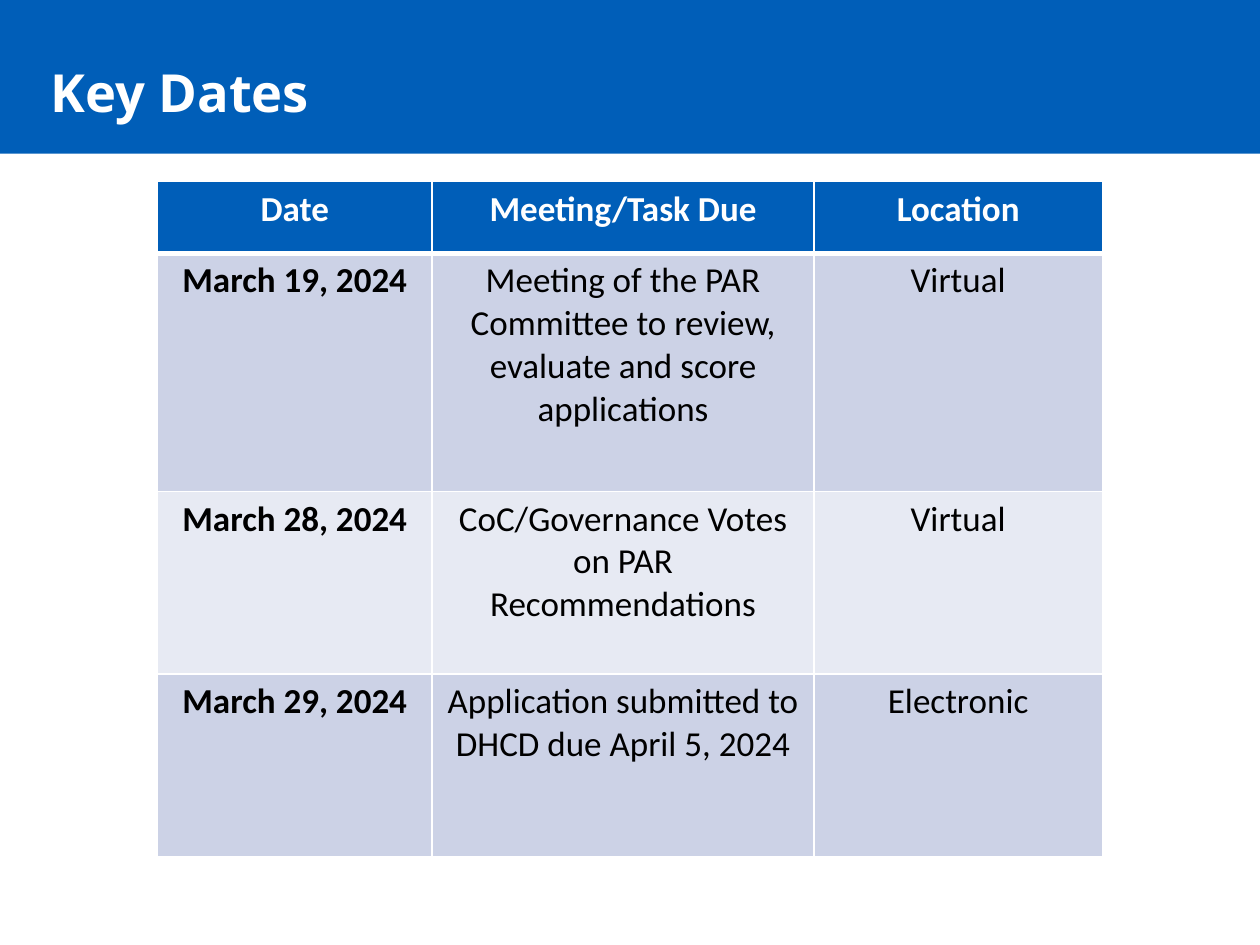
from lxml import etree
from pptx import Presentation
from pptx import util as u
from pptx.dml import color
from pptx.enum import shapes, text
from pptx.oxml import ns

BLUE, WHITE, BLACK = "005EB8", "FFFFFF", "000000"
BANDS = ["CCD2E6", "E7EAF3"]
COLUMN_WIDTHS = [2.18, 3.03, 2.29]
ROW_HEIGHTS = [0.57, 1.89, 1.45, 1.45]
KEY_DATES = [
    ["Date", "Meeting/Task Due", "Location"],
    ["March 19, 2024",
     "Meeting of the PAR Committee to review, evaluate and score applications", "Virtual"],
    ["March 28, 2024", "CoC/Governance Votes on PAR Recommendations", "Virtual"],
    ["March 29, 2024", "Application submitted to DHCD due April 5, 2024", "Electronic"],
]


def rgb(value):
    return color.RGBColor.from_string(value)


def paint(filled, value):
    filled.fill.solid()
    filled.fill.fore_color.rgb = rgb(value)


def style(paragraph, align, name, size, value, bold):
    paragraph.alignment = align
    font = paragraph.font
    font.name, font.size, font.bold = name, u.Pt(size), bold
    font.color.rgb = rgb(value)


def add_border(cell, side, width):
    properties = cell._tc.get_or_add_tcPr()
    line = etree.SubElement(properties, ns.qn(f"a:ln{side}"), w=str(u.Pt(width)))
    solid = etree.SubElement(line, ns.qn("a:solidFill"))
    etree.SubElement(solid, ns.qn("a:srgbClr"), val=WHITE)


def add_header(slide, left, top, width, height):
    band = slide.shapes.add_shape(
        shapes.MSO_SHAPE.RECTANGLE,
        u.Inches(left), u.Inches(top), u.Inches(width), u.Inches(height))
    band.shadow.inherit = False
    paint(band, BLUE)
    band.line.fill.background()

    heading = slide.shapes.title
    band.element.addnext(heading.element)
    heading.left, heading.top = u.Inches(left + 0.3), u.Inches(top + 0.31)
    heading.width, heading.height = u.Inches(width - 1.02), u.Inches(height - 0.38)
    heading.text_frame.text = "Key Dates"
    heading.text_frame.vertical_anchor = text.MSO_ANCHOR.MIDDLE
    style(heading.text_frame.paragraphs[0], text.PP_ALIGN.LEFT, "Open Sans", 30, WHITE, True)


def add_schedule(slide, left, top, width, height):
    schedule = slide.shapes.add_table(
        len(KEY_DATES), len(COLUMN_WIDTHS),
        u.Inches(left), u.Inches(top), u.Inches(width), u.Inches(height)).table
    for column, column_width in zip(schedule.columns, COLUMN_WIDTHS):
        column.width = u.Inches(column_width)
    for row, row_height in zip(schedule.rows, ROW_HEIGHTS):
        row.height = u.Inches(row_height)

    for r, entries in enumerate(KEY_DATES):
        is_header = r == 0
        borders = {"L": 1, "R": 1, "T": 3 if r == 1 else 1, "B": 3 if is_header else 1}
        for c, entry in enumerate(entries):
            cell = schedule.cell(r, c)
            for side, line_width in borders.items():
                add_border(cell, side, line_width)
            paint(cell, BLUE if is_header else BANDS[(r - 1) % 2])
            cell.text = entry
            style(cell.text_frame.paragraphs[0], text.PP_ALIGN.CENTER, "Calibri", 20,
                  WHITE if is_header else BLACK, is_header or c == 0)


def main():
    deck = Presentation()
    deck.slide_width, deck.slide_height = u.Inches(10), u.Inches(7.5)
    slide = deck.slides.add_slide(deck.slide_layouts[5])
    add_header(slide, 0, 0, 10, 1.22)
    add_schedule(slide, 1.25, 1.44, sum(COLUMN_WIDTHS), sum(ROW_HEIGHTS))
    deck.save("out.pptx")


if __name__ == "__main__":
    main()
